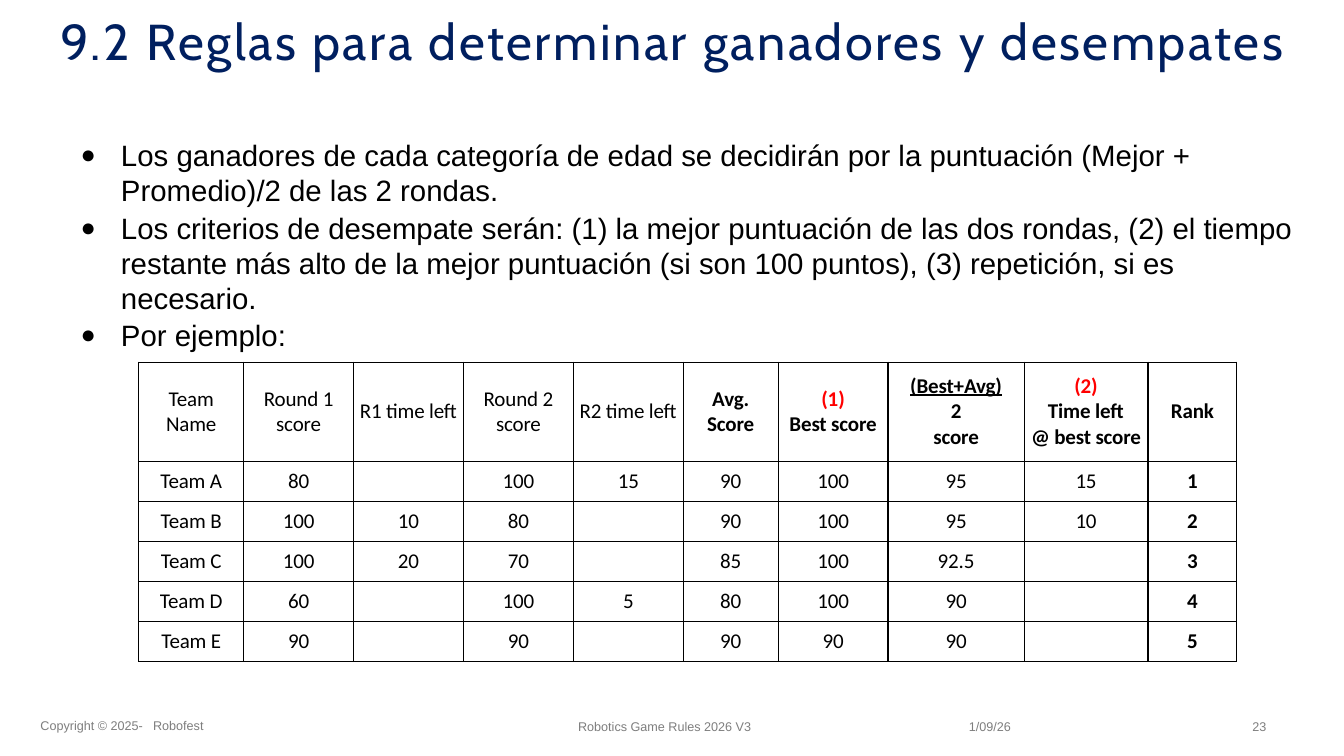
import pptx
import pptx.dml.color
import pptx.enum.text
import pptx.oxml
import pptx.oxml.ns
import pptx.util

Cm = pptx.util.Cm
Pt = pptx.util.Pt
RGBColor = pptx.dml.color.RGBColor
PP_ALIGN = pptx.enum.text.PP_ALIGN
MSO_ANCHOR = pptx.enum.text.MSO_ANCHOR

NAVY = RGBColor(0x00, 0x1F, 0x5F)
GRAY = RGBColor(0x7E, 0x7E, 0x7E)
BLACK = RGBColor(0x00, 0x00, 0x00)
RED = RGBColor(0xFF, 0x00, 0x00)

BULLETS = [
    "Los ganadores de cada categoría de edad se decidirán por la puntuación "
    "(Mejor + Promedio)/2 de las 2 rondas.",
    "Los criterios de desempate serán: (1) la mejor puntuación de las dos rondas, "
    "(2) el tiempo restante más alto de la mejor puntuación (si son 100 puntos), "
    "(3) repetición, si es necesario.",
    "Por ejemplo:",
]
COLUMN_WIDTHS = [2.64, 2.77, 2.77, 2.77, 2.77, 2.39, 2.77, 3.43, 3.12, 2.24]
ROW_HEIGHTS = [2.49] + [1.01] * 5
FIRST_BOLD_HEADER = 5
SCORES = [
    ["Team\nName", "Round 1\nscore", "R1 time left", "Round 2\nscore", "R2 time left",
     "Avg.\nScore", "(1)\nBest score", "(Best+Avg)\n2\nscore",
     "(2)\nTime left\v@ best score", "Rank"],
    ["Team A", "80", "", "100", "15", "90", "100", "95", "15", "1"],
    ["Team B", "100", "10", "80", "", "90", "100", "95", "10", "2"],
    ["Team C", "100", "20", "70", "", "85", "100", "92.5", "", "3"],
    ["Team D", "60", "", "100", "5", "80", "100", "90", "", "4"],
    ["Team E", "90", "", "90", "", "90", "90", "90", "", "5"],
]
FOOTERS = [
    ("Copyright © 2025-\tRobofest", 1.02, 18.08, 4.4),
    ("Robotics Game Rules 2026 V3", 14.57, 18.11, 4.6),
    ("1/09/26", 24.42, 18.11, 1.2),
    ("23", 31.56, 18.11, 0.6),
]


def xml(markup):
    """Parse one DrawingML element."""
    tag, rest = markup[1:].split(" ", 1)
    return pptx.oxml.parse_xml(f"<{tag} {pptx.oxml.ns.nsdecls('a')} {rest}")


class SlideBuilder:
    """Style and drawing methods for the current slide."""

    def __init__(self, prs):
        """Add a title-only slide."""
        self.slide = prs.slides.add_slide(prs.slide_layouts[5])

    def format_runs(self, p, font, size, color, bold=False, spacing=0):
        """Format every run of a paragraph."""
        for r in p.runs:
            r.font.name = font
            r.font.size = Pt(size)
            r.font.bold = bold
            r.font.color.rgb = color
            r.font._element.set("spc", str(spacing))

    def frame(self, sp, text):
        """Fill a shape with wrapped text and no margins."""
        tf = sp.text_frame
        tf.text = text
        tf.word_wrap = True
        tf.auto_size = pptx.enum.text.MSO_AUTO_SIZE.NONE
        tf.vertical_anchor = MSO_ANCHOR.TOP
        tf.margin_left = tf.margin_right = tf.margin_top = tf.margin_bottom = 0
        return tf

    def textbox(self, text, left, top, width, height):
        """Add a text box and return its text frame."""
        sp = self.slide.shapes.add_textbox(Cm(left), Cm(top), Cm(width), Cm(height))
        return self.frame(sp, text)

    def title(self, text):
        """Place and format the title."""
        sp = self.slide.shapes.title
        sp.left, sp.top, sp.width, sp.height = Cm(1.53), Cm(0.2), Cm(31.3), Cm(1.57)
        tf = self.frame(sp, text)
        tf.margin_top = Cm(0.06)
        p = tf.paragraphs[0]
        p.alignment = PP_ALIGN.LEFT
        self.format_runs(p, "Cabin", 36, NAVY, spacing=180)

    def footer(self, text, left, top, width):
        """Add a small gray footer text."""
        p = self.textbox(text, left, top, width, 0.43).paragraphs[0]
        if "\t" in text:
            p._p.get_or_add_pPr().append(
                xml(f'<a:tabLst ><a:tab pos="{Cm(2.84)}" algn="l"/></a:tabLst>'))
        self.format_runs(p, "Arial", 9, GRAY)

    def bullets(self, items):
        """Add the bulleted rules."""
        tf = self.textbox("\n".join(items), 2.01, 3.38, 30.7, 5.51)
        tf.margin_top = Cm(0.08)
        for i, p in enumerate(tf.paragraphs):
            pPr = p._p.get_or_add_pPr()
            pPr.set("marL", str(Cm(1.04)))
            pPr.set("indent", str(-Cm(1.02)))
            pPr.append(xml('<a:buSzPct val="86000"/>'))
            pPr.append(xml('<a:buFont typeface="Arial"/>'))
            pPr.append(xml('<a:buChar char="●"/>'))
            p.line_spacing = 1.0
            if i:
                p.space_before = Pt(1.4)
            self.format_runs(p, "Arial", 21, BLACK)

    def cell(self, cell, text, bold):
        """Fill, border and format one table cell."""
        cell.fill.background()
        tcPr = cell._tc.get_or_add_tcPr()
        for i, side in enumerate("LRTB"):
            tcPr.insert(i, xml(
                f'<a:ln{side} w="{Pt(1)}"><a:solidFill><a:srgbClr val="{BLACK}"/>'
                f"</a:solidFill></a:ln{side}>"))
        cell.margin_left = cell.margin_right = cell.margin_top = cell.margin_bottom = 0
        cell.vertical_anchor = MSO_ANCHOR.MIDDLE
        cell.text_frame.text = text
        for p in cell.text_frame.paragraphs:
            p.alignment = PP_ALIGN.CENTER
            color = RED if p.text in ("(1)", "(2)") else BLACK
            self.format_runs(p, "Calibri", 15, color, bold, -10)
            if p.text == "(Best+Avg)":
                p.runs[0].font.underline = True

    def table(self, rows):
        """Add the table of scores."""
        sp = self.slide.shapes.add_table(
            len(rows), len(COLUMN_WIDTHS), Cm(3.5), Cm(9.13),
            Cm(sum(COLUMN_WIDTHS)), Cm(sum(ROW_HEIGHTS)))
        table = sp.table
        table.first_row = table.horz_banding = False
        for column, width in zip(table.columns, COLUMN_WIDTHS):
            column.width = Cm(width)
        for i, (row, height) in enumerate(zip(table.rows, ROW_HEIGHTS)):
            row.height = Cm(height)
            first_bold = len(COLUMN_WIDTHS) - 1 if i else FIRST_BOLD_HEADER
            for j, text in enumerate(rows[i]):
                self.cell(table.cell(i, j), text, j >= first_bold)


def main():
    """Build and save the slide."""
    prs = pptx.Presentation()
    prs.slide_width, prs.slide_height = Cm(33.87), Cm(19.05)
    s = SlideBuilder(prs)
    s.title("9.2 Reglas para determinar ganadores y desempates")
    for footer in FOOTERS:
        s.footer(*footer)
    s.bullets(BULLETS)
    s.table(SCORES)
    prs.save("out.pptx")


if __name__ == "__main__":
    main()
